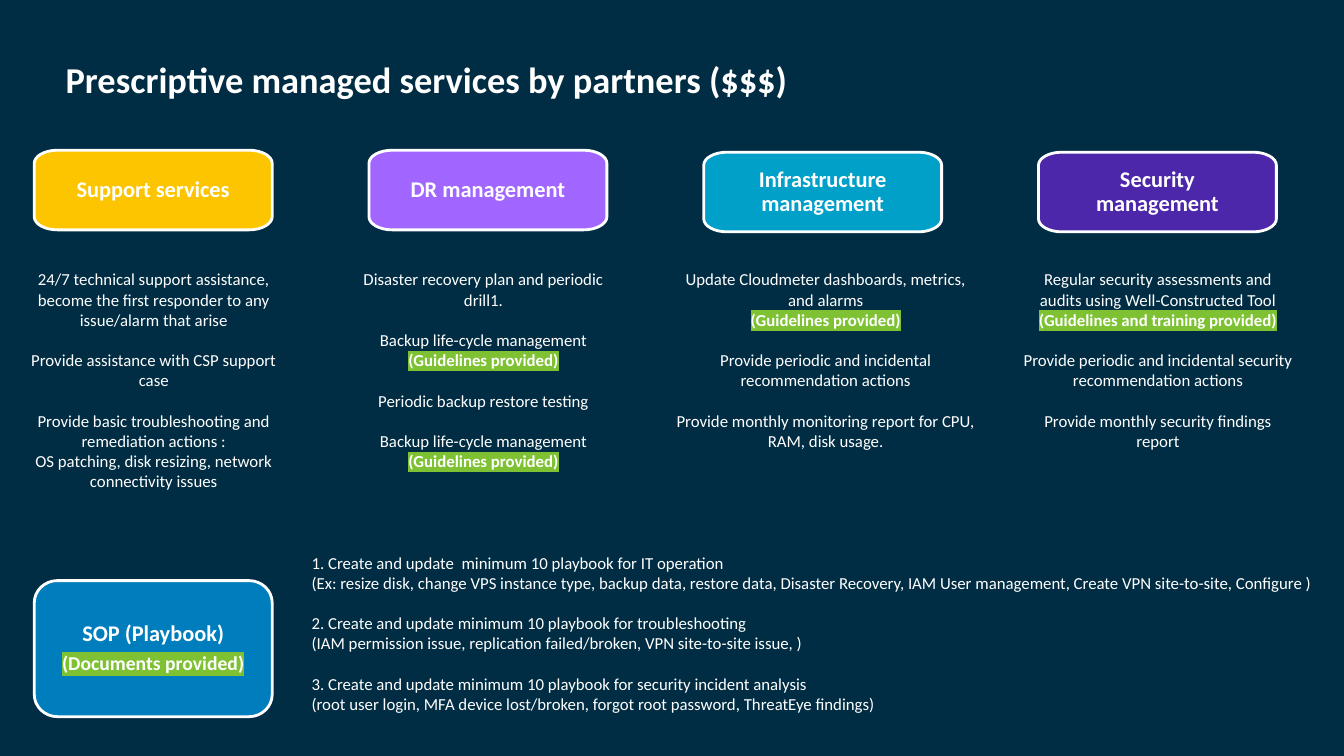
from lxml.etree import SubElement
from pptx import Presentation
from pptx.dml.color import RGBColor
from pptx.enum.text import MSO_ANCHOR, MSO_AUTO_SIZE, PP_ALIGN
from pptx.oxml.ns import qn
from pptx.util import Inches, Pt

HUES = {
    "back": "002D43", "text": "FFFFFF", "mark": "7EC234", "gold": "FDC500",
    "lilac": "A166FF", "teal": "00A0C8", "violet": "4D27AA", "blue": "007DBC",
}
RGB = {name: RGBColor.from_string(code) for name, code in HUES.items()}
LEFT, STEP, WIDE = 0.34, 3.32, 2.36  # card columns, in inches
GAP = 14.5  # one line of 12 pt text, in points
BEND = 0.55  # pull of a corner on its curve


def write(frame, groups, sizes, form, gap=0, bold=False):
    """Write groups of lines; a leading * marks a highlighted line."""
    lines = [(line, gap if g and not n else 0)
             for g, group in enumerate(groups) for n, line in enumerate(group)]
    for i, (line, space) in enumerate(lines):
        para = frame.paragraphs[0] if i == 0 else frame.add_paragraph()
        for key, value in {"space_before": Pt(space), **form}.items():
            setattr(para, key, value)
        run = para.add_run()
        run.text = line.lstrip("*")
        mark = line.startswith("*")
        look = {"size": Pt(sizes[min(i, len(sizes) - 1)]),
                "bold": bold or mark, "name": "Calibri"}
        for key, value in look.items():
            setattr(run.font, key, value)
        run.font.color.rgb = RGB["text"]
        if mark:
            props = run.font._element
            light = SubElement(props, qn("a:highlight"))
            SubElement(light, qn("a:srgbClr"), val=HUES["mark"])
            props.find(qn("a:solidFill")).addnext(light)


def card(left, top, high, ry, hue, lines, sizes):
    """Draw a card with elliptical corners and a centred label."""
    x, y, w, h, rx, ry = map(Inches, (left, top, WIDE, high, 0.23, ry))
    dots = [(0, ry), (rx, 0), (w - rx, 0), (w, ry),
            (w, h - ry), (w - rx, h), (rx, h), (0, h - ry)]
    pen = slide.shapes.build_freeform(x, y + ry)
    pen.add_line_segments([(x + a, y + b) for a, b in dots[1:]], close=True)
    shape = pen.convert_to_shape()

    # Turn every other side into a curve
    sides = list(shape._element.iter(qn("a:lnTo")))[::2]
    tips = [(0, 0), (w, 0), (w, h), (0, h)]
    for side, tip, start, end in zip(sides, tips, dots[::2], dots[1::2]):
        side.tag = qn("a:cubicBezTo")
        for place, dot in enumerate((start, end)):
            a, b = (round(d + BEND * (t - d)) for d, t in zip(dot, tip))
            point = SubElement(side, qn("a:pt"), x=str(a), y=str(b))
            side.insert(place, point)

    shape.shadow.inherit = False
    shape.fill.solid()
    shape.fill.fore_color.rgb = RGB[hue]
    shape.line.color.rgb = RGB["text"]
    shape.line.width = Pt(2)
    frame = shape.text_frame
    pad = Inches(0.18)
    for key, value in {"word_wrap": True, "vertical_anchor": MSO_ANCHOR.MIDDLE,
                       "margin_left": pad, "margin_right": pad,
                       "margin_top": pad, "margin_bottom": pad}.items():
        setattr(frame, key, value)
    write(frame, [lines], sizes, {"alignment": PP_ALIGN.CENTER, "line_spacing": 0.9,
                                  "space_after": Pt(5.6)}, bold=True)


# Slide
deck = Presentation()
deck.slide_width, deck.slide_height = Inches(13.33), Inches(7.5)
slide = deck.slides.add_slide(deck.slide_layouts[1])
slide.background.fill.solid()
slide.background.fill.fore_color.rgb = RGB["back"]

# Title and playbook list
title, body = slide.shapes.title, slide.placeholders[1]
for holder, box in ((title, (0.55, 0.52, 11.69, 0.98)),
                    (body, (2.99, 5.43, 10.17, 1.72))):
    holder.left, holder.top, holder.width, holder.height = map(Inches, box)
    for key, value in {"word_wrap": True, "auto_size": MSO_AUTO_SIZE.NONE,
                       "vertical_anchor": MSO_ANCHOR.TOP}.items():
        setattr(holder.text_frame, key, value)

plain = {"alignment": PP_ALIGN.LEFT}
write(title.text_frame, [["Prescriptive managed services by partners ($$$)"]],
      [26], plain, bold=True)
write(body.text_frame, [
    ["1. Create and update  minimum 10 playbook for IT operation",
     "(Ex: resize disk, change VPS instance type, backup data, restore data, "
     "Disaster Recovery, IAM User management, Create VPN site-to-site, Configure )"],
    ["2. Create and update minimum 10 playbook for troubleshooting",
     "(IAM permission issue, replication failed/broken, VPN site-to-site issue, )"],
    ["3. Create and update minimum 10 playbook for security incident analysis",
     "(root user login, MFA device lost/broken, forgot root password, "
     "ThreatEye findings)"],
], [12], plain, GAP)
for para in body.text_frame.paragraphs:
    props = para._p.get_or_add_pPr()
    props.set("marL", "0")
    props.set("indent", "0")
    SubElement(props, qn("a:buNone"))

# Service columns: label, hue, card top, text box, text groups
guide = "*(Guidelines provided)"
cycle = ["Backup life-cycle management", guide]
columns = [
    ("Support services", "gold", 1.49, (0.08, 2.62, 2.89, 2.32), [
        ["24/7 technical support assistance, become the first responder "
         "to any issue/alarm that arise"],
        ["Provide assistance with CSP support case"],
        ["Provide basic troubleshooting and remediation actions :",
         "OS patching, disk resizing, network connectivity issues"]]),
    ("DR management", "lilac", 1.49, (3.35, 2.62, 2.89, 2.12), [
        ["Disaster recovery plan and periodic drill1."],
        cycle, ["Periodic backup restore testing"], cycle]),
    ("Infrastructure management", "teal", 1.51, (6.61, 2.62, 3.16, 2.12), [
        ["Update Cloudmeter dashboards, metrics, and alarms", guide],
        ["Provide periodic and incidental recommendation actions"],
        ["Provide monthly monitoring report for CPU, RAM, disk usage."]]),
    ("Security management", "violet", 1.51, (10.04, 2.62, 2.89, 1.92), [
        ["Regular security assessments and audits using Well-Constructed Tool",
         "*(Guidelines and training provided)"],
        ["Provide periodic and incidental security recommendation actions"],
        ["Provide monthly security findings report"]]),
]
for col, (label, hue, top, box, groups) in enumerate(columns):
    card(LEFT + col * STEP, top, 0.79, 0.13, hue, [label], [16])
    note = slide.shapes.add_textbox(*map(Inches, box))
    note.text_frame.word_wrap = True
    write(note.text_frame, groups, [12], {"alignment": PP_ALIGN.CENTER}, GAP)

# Playbook card
card(LEFT, 5.76, 1.35, 0.22, "blue",
     ["SOP (Playbook)", "*(Documents provided)"], [16, 14])

deck.save("out.pptx")
